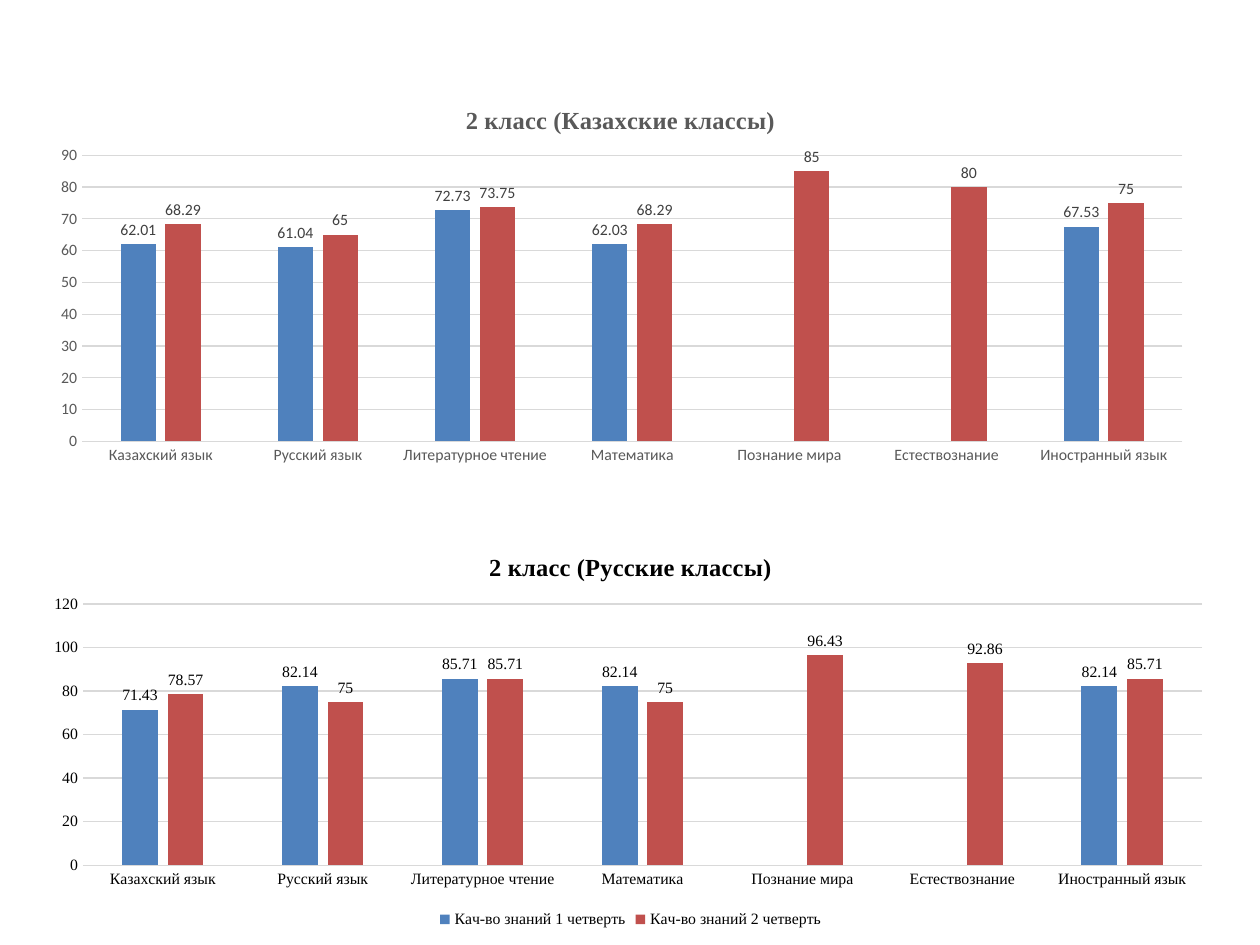
import pptx
import pptx.chart.data
import pptx.dml.color
import pptx.enum.chart
import pptx.oxml
import pptx.oxml.ns
import pptx.util
from pptx.util import Inches

RGBColor = pptx.dml.color.RGBColor
BLACK = RGBColor(0x00, 0x00, 0x00)
GREY = RGBColor(0x59, 0x59, 0x59)
DARK = RGBColor(0x40, 0x40, 0x40)
RULE = RGBColor(0xD9, 0xD9, 0xD9)
BLUE = RGBColor(0x4F, 0x81, 0xBD)
RED = RGBColor(0xC0, 0x50, 0x4D)
SERIF = "Times New Roman"
SANS = "Calibri"

TERMS = ["Кач-во знаний 1 четверть", "Кач-во знаний 2 четверть"]
SUBJECTS = ["Казахский язык", "Русский язык", "Литературное чтение", "Математика",
            "Познание мира", "Естествознание", "Иностранный язык"]

# Title, box, plot area (fractions), values, font, text and label colours, axis top and step, legend
CHARTS = [
    ("2 класс (Русские классы)", (0.28, 4.22, 9.45, 3.19), (0.04, 0.18, 0.94, 0.65),
     [(71.43, 82.14, 85.71, 82.14, None, None, 82.14),
      (78.57, 75, 85.71, 75, 96.43, 92.86, 85.71)],
     SERIF, BLACK, BLACK, 120, 20, True),
    ("2 класс (Казахские классы)", (0.28, 0.68, 9.29, 3.07), (0.04, 0.18, 0.94, 0.74),
     [(62.01, 61.04, 72.73, 62.03, None, None, 67.53),
      (68.29, 65, 73.75, 68.29, 85, 80, 75)],
     SANS, GREY, DARK, 90, 10, False),
]


def style(font, size, color, face, bold=False):
    font.size = pptx.util.Pt(size)
    font.color.rgb = color
    font.name = face
    font.bold = bold


def place(chart, area):
    """Fix the inner plot area at the given fractions of the chart."""
    parts = "".join(f'<c:{key} val="{val}"/>' for key, val in zip("xywh", area))
    layout = pptx.oxml.parse_xml(
        f'<c:layout {pptx.oxml.ns.nsdecls("c")}><c:manualLayout>'
        '<c:layoutTarget val="inner"/><c:xMode val="edge"/><c:yMode val="edge"/>'
        f'{parts}</c:manualLayout></c:layout>')
    plot = chart.element.chart.plotArea
    for old in plot.findall(pptx.oxml.ns.qn("c:layout")):
        plot.remove(old)
    plot.insert(0, layout)


prs = pptx.Presentation()
prs.slide_width, prs.slide_height = Inches(10), Inches(7.5)
slide = prs.slides.add_slide(prs.slide_layouts[6])

for title, box, area, values, face, color, tone, top, step, legend in CHARTS:
    # Data
    data = pptx.chart.data.CategoryChartData()
    data.categories = SUBJECTS
    for term, vals in zip(TERMS, values):
        data.add_series(term, vals)
    chart = slide.shapes.add_chart(
        pptx.enum.chart.XL_CHART_TYPE.COLUMN_CLUSTERED,
        *[Inches(n) for n in box], data).chart
    style(chart.font, 10, BLACK, face)
    place(chart, area)

    # Title
    chart.has_title = True
    frame = chart.chart_title.text_frame
    frame.text = title
    style(frame.paragraphs[0].runs[0].font, 14, color, SERIF, True)
    chart.chart_title.include_in_layout = False

    # Axes
    for axis in (chart.category_axis, chart.value_axis):
        style(axis.tick_labels.font, 9, color, face)
        axis.major_tick_mark = pptx.enum.chart.XL_TICK_MARK.NONE
        axis.minor_tick_mark = pptx.enum.chart.XL_TICK_MARK.NONE
    chart.value_axis.minimum_scale = 0
    chart.value_axis.maximum_scale = top
    chart.value_axis.major_unit = step
    chart.value_axis.format.line.fill.background()
    for part in (chart.category_axis, chart.value_axis.major_gridlines):
        part.format.line.color.rgb = RULE
        part.format.line.width = pptx.util.Pt(0.75)

    # Columns and their labels
    plot = chart.plots[0]
    plot.gap_width, plot.overlap = 219, -27
    plot.vary_by_categories = False
    for series, fill in zip(plot.series, (BLUE, RED)):
        series.format.fill.solid()
        series.format.fill.fore_color.rgb = fill
        labels = series.data_labels
        labels.show_value = True
        labels.position = pptx.enum.chart.XL_LABEL_POSITION.OUTSIDE_END
        style(labels.font, 9, tone, face)

    # Legend
    chart.has_legend = legend
    if legend:
        chart.legend.position = pptx.enum.chart.XL_LEGEND_POSITION.BOTTOM
        chart.legend.include_in_layout = False
        style(chart.legend.font, 9, color, face)

prs.save("out.pptx")
